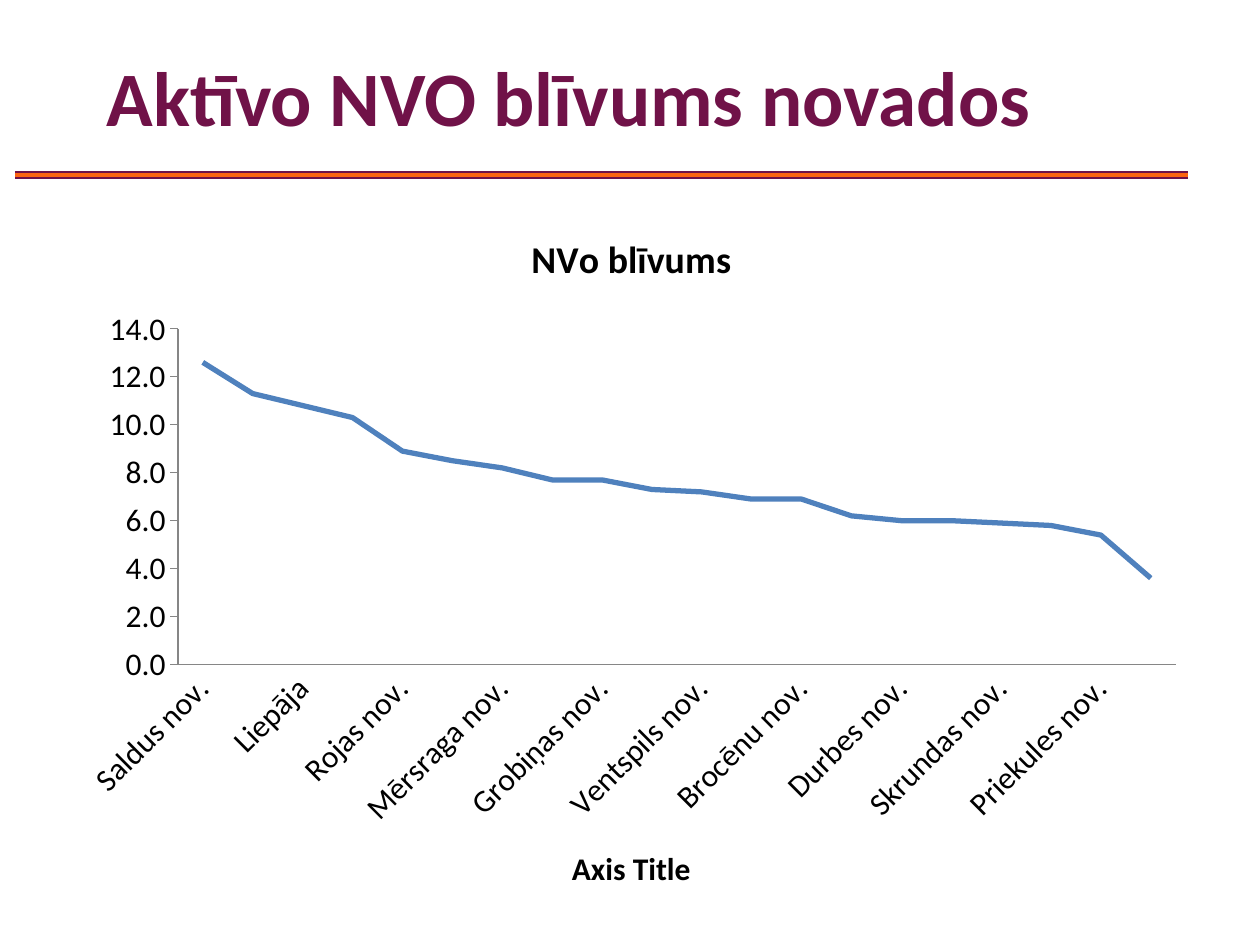
from lxml.etree import SubElement
from pptx import Presentation
from pptx.chart.data import CategoryChartData
from pptx.dml.color import RGBColor
from pptx.enum.chart import XL_CHART_TYPE, XL_MARKER_STYLE, XL_TICK_MARK
from pptx.enum.shapes import MSO_CONNECTOR
from pptx.enum.text import MSO_ANCHOR, MSO_AUTO_SIZE, PP_ALIGN
from pptx.oxml import parse_xml
from pptx.oxml.ns import nsdecls, qn
from pptx.util import Cm, Pt

COLORS = {"plum": "701248", "orange": "FC6410", "curve": "4F81BD",
          "axis": "868686", "text": "000000"}
FONT = "Calibri"
DENSITY = {
    "Saldus nov.": 12.6, "Alsungas nov.": 11.3, "Liepāja": 10.8,
    "Kuldīgas nov.": 10.3, "Rojas nov.": 8.9, "Pāvilostas nov.": 8.5,
    "Mērsraga nov.": 8.2, "Rucavas nov.": 7.7, "Grobiņas nov.": 7.7,
    "Talsu nov.": 7.3, "Ventspils nov.": 7.2, "Dundagas nov.": 6.9,
    "Brocēnu nov.": 6.9, "Aizputes nov.": 6.2, "Durbes nov.": 6,
    "Ventspils": 6, "Skrundas nov.": 5.9, "Nīcas nov.": 5.8,
    "Priekules nov.": 5.4, "Vaiņodes nov.": 3.6,
}
PLOT_LAYOUT = {"x": 0.1, "y": 0.175, "w": 0.88, "h": 0.47}


def color(name):
    return RGBColor.from_string(COLORS[name])


def set_format(target, values):
    for name, value in values.items():
        setattr(target, name, value)


def set_font(font, size, bold=False, tint="text"):
    set_format(font, {"name": FONT, "size": Pt(size), "bold": bold})
    font.color.rgb = color(tint)


def add_heading(slide, left, top, width, height):
    heading = slide.shapes.title
    set_format(heading, {"left": left, "top": top, "width": width, "height": height})
    frame = heading.text_frame
    set_format(frame, {"text": "Aktīvo NVO blīvums novados", "word_wrap": True,
                       "auto_size": MSO_AUTO_SIZE.NONE,
                       "vertical_anchor": MSO_ANCHOR.MIDDLE})
    frame.paragraphs[0].alignment = PP_ALIGN.LEFT
    set_font(frame.paragraphs[0].runs[0].font, 44, True, "plum")


def add_double_rule(slide, left, top, width):
    for tint, weight in (("plum", 4.5), ("orange", 2.25)):
        rule = slide.shapes.add_connector(
            MSO_CONNECTOR.STRAIGHT, left, top, left + width, top)
        rule.line.color.rgb = color(tint)
        rule.line.width = Pt(weight)
        SubElement(rule._element.spPr, qn("a:effectLst"))


def set_caption(owner, caption, size):
    frame = owner.text_frame
    frame.text = caption
    set_font(frame.paragraphs[0].runs[0].font, size, True)


def place_plot(chart):
    plot_area = chart._chartSpace.chart.plotArea
    for layout in plot_area.findall(qn("c:layout")):
        plot_area.remove(layout)
    extents = "".join(f'<c:{key} val="{value}"/>' for key, value in PLOT_LAYOUT.items())
    plot_area.insert(0, parse_xml(
        f'<c:layout {nsdecls("c")}><c:manualLayout><c:layoutTarget val="inner"/>'
        f'<c:xMode val="edge"/><c:yMode val="edge"/>{extents}'
        '</c:manualLayout></c:layout>'))


def slant_labels(axis):
    axis_xml = axis._element
    label_box = axis_xml.find(qn("c:txPr")).find(qn("a:bodyPr"))
    label_box.set("rot", "-2700000")
    label_box.set("vert", "horz")
    # Every second district is labelled
    axis_xml.find(qn("c:noMultiLvlLbl")).addprevious(
        parse_xml(f'<c:tickLblSkip {nsdecls("c")} val="2"/>'))


def add_density_chart(slide, left, top, width, height):
    density = CategoryChartData(number_format="0.0")
    density.categories = list(DENSITY)
    density.add_series("NVo blīvums", list(DENSITY.values()))
    chart = slide.shapes.add_chart(
        XL_CHART_TYPE.LINE, left, top, width, height, density).chart
    set_font(chart.font, 18)
    set_format(chart, {"has_legend": False, "has_title": True})
    set_caption(chart.chart_title, "NVo blīvums", 21.6)
    place_plot(chart)

    # Curve
    plot = chart.plots[0]
    plot.vary_by_categories = False
    curve = plot.series[0]
    curve.smooth = False
    curve.marker.style = XL_MARKER_STYLE.NONE
    curve.format.line.color.rgb = color("curve")
    curve.format.line.width = Pt(3)

    # Axes
    districts, values = chart.category_axis, chart.value_axis
    for axis, tick in ((districts, XL_TICK_MARK.NONE), (values, XL_TICK_MARK.OUTSIDE)):
        set_format(axis, {"has_major_gridlines": False, "major_tick_mark": tick,
                          "minor_tick_mark": XL_TICK_MARK.NONE})
        axis.format.line.color.rgb = color("axis")
        set_font(axis.tick_labels.font, 18)
    set_format(values, {"minimum_scale": 0, "maximum_scale": 14, "major_unit": 2})
    set_format(values.tick_labels, {"number_format": "0.0",
                                    "number_format_is_linked": False})
    set_caption(districts.axis_title, "Axis Title", 18)
    slant_labels(districts)


def main():
    deck = Presentation()
    set_format(deck, {"slide_width": Cm(25.4), "slide_height": Cm(19.05)})
    slide = deck.slides.add_slide(deck.slide_layouts[5])
    add_double_rule(slide, Cm(0.3), Cm(3.53), Cm(23.65))
    add_heading(slide, Cm(1.9), Cm(0.33), Cm(22.05), Cm(3.2))
    add_density_chart(slide, Cm(1.3), Cm(4.11), Cm(22.86), Cm(14.4))
    deck.save("out.pptx")


if __name__ == "__main__":
    main()
